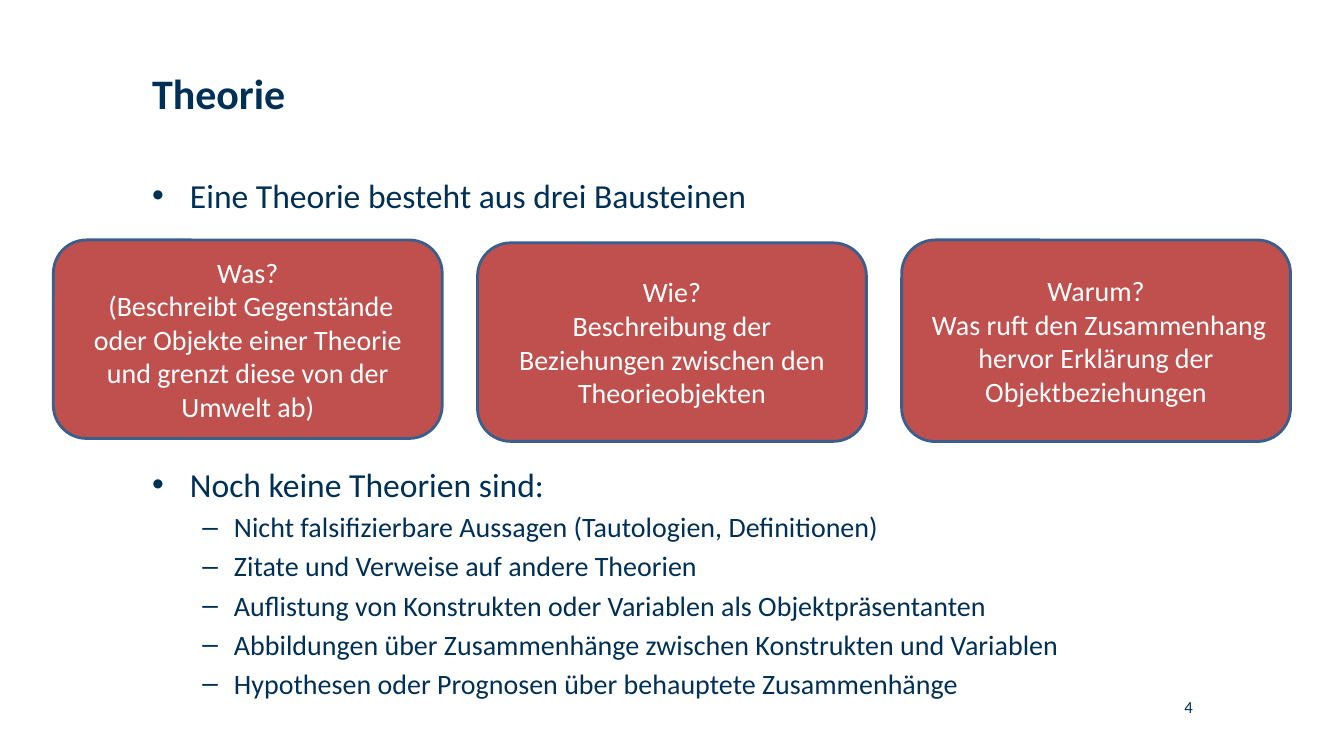
from dataclasses import dataclass

from lxml import etree
from pptx import Presentation
from pptx.dml.color import RGBColor
from pptx.enum.shapes import MSO_SHAPE
from pptx.enum.text import MSO_ANCHOR, MSO_AUTO_SIZE, PP_ALIGN
from pptx.oxml.ns import qn
from pptx.util import Pt

ROUNDED = MSO_SHAPE.ROUNDED_RECTANGLE
TOP, MIDDLE = MSO_ANCHOR.TOP, MSO_ANCHOR.MIDDLE
LEFT, CENTER, RIGHT = PP_ALIGN.LEFT, PP_ALIGN.CENTER, PP_ALIGN.RIGHT
NO_AUTOFIT = MSO_AUTO_SIZE.NONE
TWO_CONTENT_LAYOUT = 3


@dataclass(frozen=True)
class Theme:
    font: str = "Calibri"
    navy: RGBColor = RGBColor(0x00, 0x30, 0x56)
    red: RGBColor = RGBColor(0xC0, 0x50, 0x4D)
    border: RGBColor = RGBColor(0x3A, 0x5F, 0x8C)
    white: RGBColor = RGBColor(0xFF, 0xFF, 0xFF)
    title_size: int = 30
    level_sizes: tuple = (24, 20)
    block_size: int = 20
    number_size: int = 12


THEME = Theme()
# Bullet sign, left margin and hanging indent per level
BULLETS = (("•", 27, -27), ("–", 58.5, -22.5))

BLOCK_LEFT, BLOCK_STEP, BLOCK_WIDTH = 38.16, 303.12, 277.92
# Lines, top and height of each building block
BLOCKS = (
    ("Was?\n (Beschreibt Gegenstände oder Objekte einer Theorie "
     "und grenzt diese von der Umwelt ab)", 171.4, 141.8),
    ("Wie?\nBeschreibung der Beziehungen zwischen den Theorieobjekten", 173.5, 141.8),
    ("Warum?\n Was ruft den Zusammenhang hervor Erklärung der "
     "Objektbeziehungen", 171.4, 144),
)
INTRO = ((0, "Eine Theorie besteht aus drei Bausteinen"),)
NOT_THEORIES = (
    (0, "Noch keine Theorien sind:"),
    (1, "Nicht falsifizierbare Aussagen (Tautologien, Definitionen)"),
    (1, "Zitate und Verweise auf andere Theorien"),
    (1, "Auflistung von Konstrukten oder Variablen als Objektpräsentanten"),
    (1, "Abbildungen über Zusammenhänge zwischen Konstrukten und Variablen"),
    (1, "Hypothesen oder Prognosen über behauptete Zusammenhänge"),
)


def place(shape, left, top, width, height):
    shape.left, shape.top = Pt(left), Pt(top)
    shape.width, shape.height = Pt(width), Pt(height)


def prepare_frame(frame):
    """Wrap text from the top left corner, without margins or resizing."""
    frame.word_wrap = True
    frame.auto_size = NO_AUTOFIT
    frame.vertical_anchor = TOP
    frame.margin_left = frame.margin_right = 0
    frame.margin_top = frame.margin_bottom = 0


def format_paragraph(paragraph, size, color, align=LEFT, bold=False):
    paragraph.alignment = align
    for run in paragraph.runs:
        run.font.name = THEME.font
        run.font.size = Pt(size)
        run.font.bold = bold
        run.font.color.rgb = color


def set_bullet(paragraph, sign, margin, indent):
    properties = paragraph._p.get_or_add_pPr()
    properties.set("marL", str(Pt(margin)))
    properties.set("indent", str(Pt(indent)))
    etree.SubElement(properties, qn("a:buFont")).set("typeface", "Arial")
    etree.SubElement(properties, qn("a:buChar")).set("char", sign)


def fill_title(title, text, box):
    place(title, *box)
    prepare_frame(title.text_frame)
    title.text_frame.text = text
    format_paragraph(title.text_frame.paragraphs[0], THEME.title_size, THEME.navy, bold=True)


def fill_list(body, items, box):
    place(body, *box)
    frame = body.text_frame
    prepare_frame(frame)
    frame.text = "\n".join(text for _, text in items)
    for paragraph, (level, _) in zip(frame.paragraphs, items):
        paragraph.level = level
        format_paragraph(paragraph, THEME.level_sizes[level], THEME.navy)
        set_bullet(paragraph, *BULLETS[level])


def add_block(slide, text, left, top, height):
    block = slide.shapes.add_shape(ROUNDED, Pt(left), Pt(top), Pt(BLOCK_WIDTH), Pt(height))
    block.shadow.inherit = False
    block.fill.solid()
    block.fill.fore_color.rgb = THEME.red
    block.line.color.rgb = THEME.border
    block.line.width = Pt(2)
    frame = block.text_frame
    frame.word_wrap = True
    frame.vertical_anchor = MIDDLE
    frame.text = text
    for paragraph in frame.paragraphs:
        format_paragraph(paragraph, THEME.block_size, THEME.white, CENTER)


def add_page_number(slide, number, box):
    page_number = slide.shapes.add_textbox(*map(Pt, box))
    prepare_frame(page_number.text_frame)
    page_number.text_frame.text = number
    format_paragraph(page_number.text_frame.paragraphs[0], THEME.number_size, THEME.navy, RIGHT)


def main():
    presentation = Presentation()
    presentation.slide_width, presentation.slide_height = Pt(960.48), Pt(540)
    slide = presentation.slides.add_slide(presentation.slide_layouts[TWO_CONTENT_LAYOUT])
    title, intro, not_theories = slide.placeholders

    fill_title(title, "Theorie", (108.7, 48.2, 508.3, 98.6))
    fill_list(intro, INTRO, (108.7, 124.6, 734.4, 49))
    for column, (text, top, height) in enumerate(BLOCKS):
        add_block(slide, text, BLOCK_LEFT + column * BLOCK_STEP, top, height)
    fill_list(not_theories, NOT_THEORIES, (108.7, 331.2, 742.3, 190))
    add_page_number(slide, "4", (741.6, 497.5, 110.9, 14.4))
    presentation.save("out.pptx")


if __name__ == "__main__":
    main()
